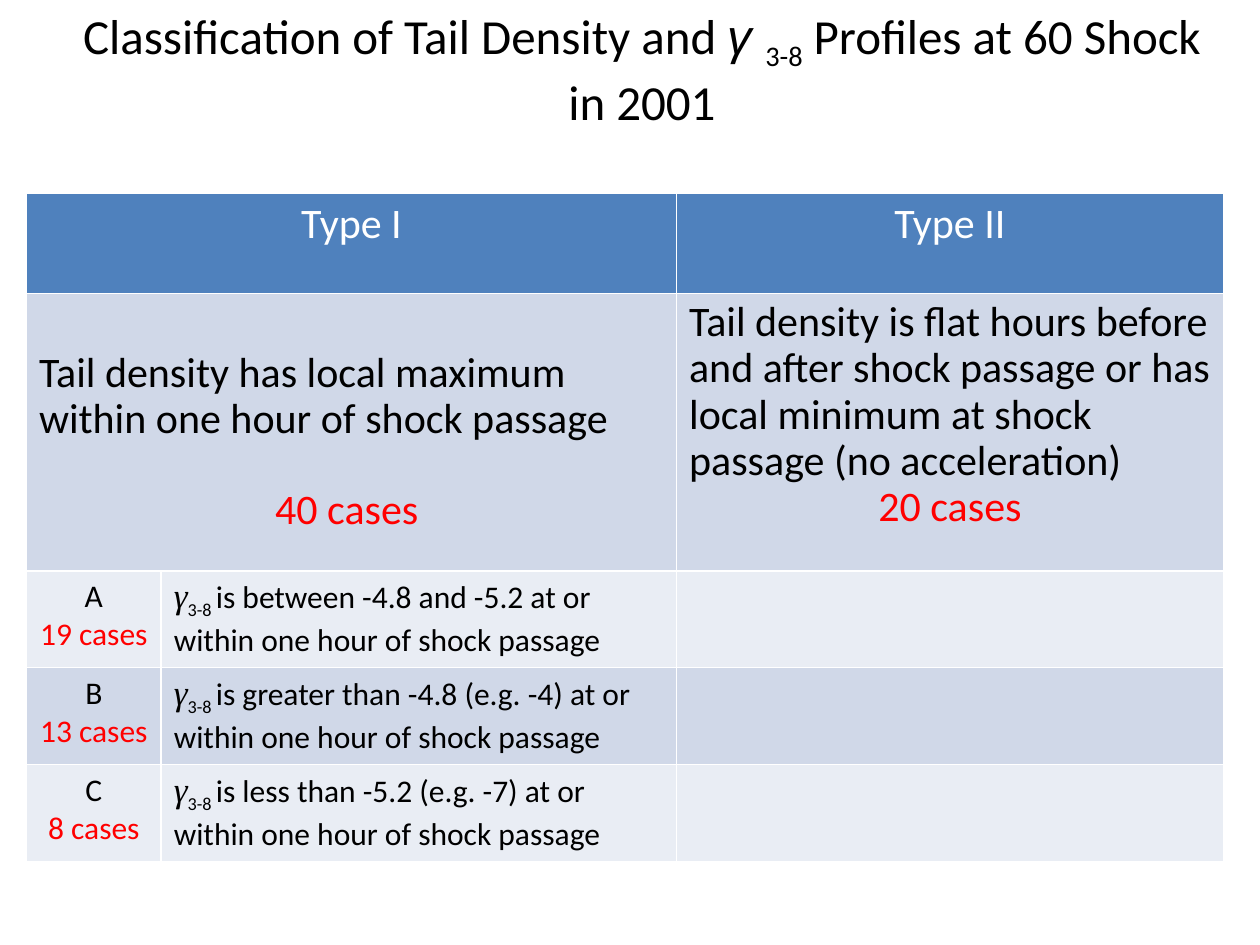
"""Build a slide that sorts shock profiles by type in a table."""
from lxml.etree import SubElement
from pptx import Presentation
from pptx.dml.color import RGBColor as RGB
from pptx.enum.text import MSO_ANCHOR as Anchor, MSO_AUTO_SIZE as Fit, PP_ALIGN as Align
from pptx.oxml.ns import qn
from pptx.util import Inches, Pt

HUES = {"black": "000000", "white": "FFFFFF", "red": "FF0000",
        "head": "4F81BD", "dark": "D0D8E8", "light": "E9EDF4"}


def put(para, text, size, hue="black", face="Calibri", slant=False, base=0):
    """Add one formatted run to a paragraph."""
    run = para.add_run()
    run.text = text
    font = run.font
    font.size, font.name = Pt(size), face
    font.bold, font.italic = False, slant
    font.color.rgb = RGB.from_string(HUES[hue])
    if base:
        font._element.set("baseline", str(base * 1000))


def paint(cell, hue):
    """Give a cell white borders and a plain fill."""
    props = cell._tc.get_or_add_tcPr()
    for side in ("lnL", "lnR", "lnT", "lnB"):
        line = SubElement(props, qn(f"a:{side}"), w=str(Pt(1)))
        fill = SubElement(line, qn("a:solidFill"))
        SubElement(fill, qn("a:srgbClr"), val=HUES["white"])
    cell.fill.solid()
    cell.fill.fore_color.rgb = RGB.from_string(HUES[hue])


deck = Presentation()
deck.slide_width, deck.slide_height = Inches(10), Inches(7.5)
slide = deck.slides.add_slide(deck.slide_layouts[5])

title = slide.shapes.title
title.left, title.top = Inches(0.48), Inches(-0.01)
title.width, title.height = Inches(9.23), Inches(1.04)
frame = title.text_frame
frame.word_wrap, frame.auto_size = True, Fit.NONE
frame.vertical_anchor = Anchor.TOP
para = frame.paragraphs[0]
para.alignment = Align.CENTER
put(para, "Classification of Tail Density and ", 28)
put(para, "γ ", 28, face="Arial", slant=True)
put(para, "3-8", 28, base=-25)
put(para, " Profiles at 60 Shock in 2001", 28)

wides = [1.07, 4.09, 4.34]
highs = [0.8, 2.2, 0.77, 0.77, 0.77]
table = slide.shapes.add_table(
    len(highs), len(wides), Inches(0.21), Inches(1.53),
    Inches(sum(wides)), Inches(sum(highs))).table
for col, wide in zip(table.columns, wides):
    col.width = Inches(wide)
for row, high, hue in zip(table.rows, highs, ["head", "dark", "light", "dark", "light"]):
    row.height = Inches(high)
    for cell in row.cells:
        paint(cell, hue)
for row in (0, 1):
    table.cell(row, 0).merge(table.cell(row, 1))

types = [
    (0, "Type I", "Tail density has local maximum within one hour of shock passage",
     "40 cases ", 0.45, 26),
    (2, "Type II", "Tail density is flat hours before and after shock passage or has "
     "local minimum at shock passage (no acceleration)", "20 cases", 0.05, 0),
]
for col, name, rule, count, top, gap in types:
    para = table.cell(0, col).text_frame.paragraphs[0]
    para.alignment = Align.CENTER
    put(para, name, 24, "white")
    cell = table.cell(1, col)
    cell.margin_top = Inches(top)
    para = cell.text_frame.paragraphs[0]
    para.line_spacing = 0.9
    put(para, rule, 24)
    para = cell.text_frame.add_paragraph()
    para.alignment, para.line_spacing = Align.CENTER, 0.9
    para.space_before = Pt(gap)
    put(para, count, 24, "red")

groups = [
    ("A", "19 cases", "between -4.8 and -5.2"),
    ("B", "13 cases", "greater than -4.8 (e.g. -4)"),
    ("C", "8 cases", "less than -5.2 (e.g. -7)"),
]
for row, (name, count, span) in enumerate(groups, 2):
    frame = table.cell(row, 0).text_frame
    para = frame.paragraphs[0]
    para.alignment = Align.CENTER
    put(para, name, 18)
    para = frame.add_paragraph()
    para.alignment = Align.CENTER
    put(para, count, 18, "red")
    para = table.cell(row, 1).text_frame.paragraphs[0]
    put(para, "γ", 20, face="Times New Roman", slant=True)
    put(para, "3-8 ", 18, base=-25)
    put(para, f"is {span} at or within one hour of shock passage", 18)

deck.save("out.pptx")
